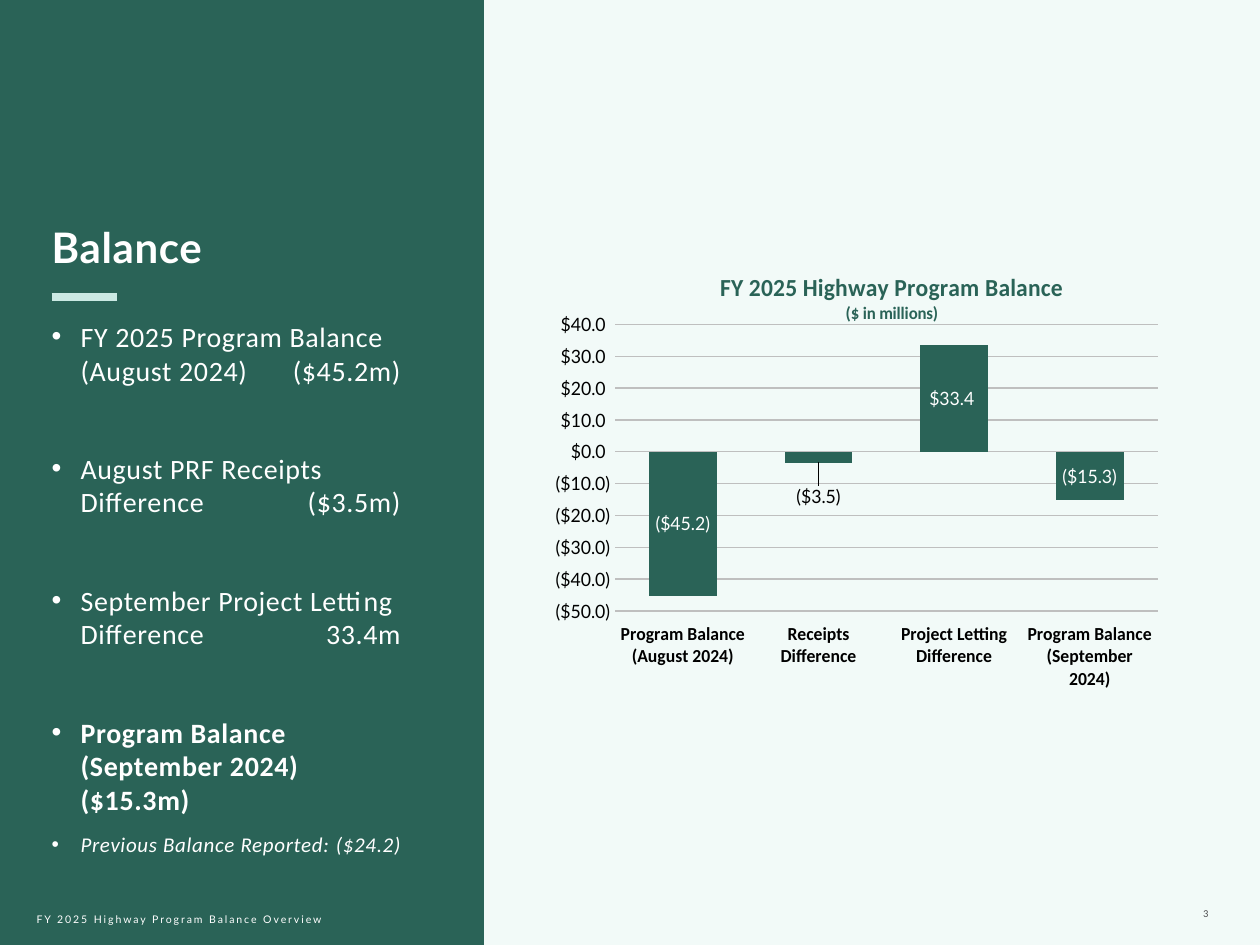
from dataclasses import dataclass

from lxml.etree import SubElement
from pptx import Presentation
from pptx.chart.data import CategoryChartData
from pptx.dml.color import RGBColor
from pptx.enum.chart import XL_CHART_TYPE as ChartType
from pptx.enum.chart import XL_LABEL_POSITION as LabelPosition
from pptx.enum.chart import XL_TICK_LABEL_POSITION as TickPosition
from pptx.enum.chart import XL_TICK_MARK as TickMark
from pptx.enum.shapes import MSO_CONNECTOR as Connector
from pptx.enum.shapes import MSO_SHAPE as Shape
from pptx.enum.text import MSO_ANCHOR as Anchor
from pptx.enum.text import PP_ALIGN as Align
from pptx.oxml import parse_xml
from pptx.oxml.ns import nsdecls, qn
from pptx.util import Inches, Pt

GREEN, MINT, PALE = "2A6357", "CBE9E3", "F2FAF8"
WHITE, BLACK, GREY, RULE = "FFFFFF", "000000", "4D4D4F", "BFBFBF"
MONEY = '"$"#,##0.0_);\\("$"#,##0.0\\)'
INDENT, AMOUNT_TAB = Inches(0.23), Inches(2.77)


@dataclass(frozen=True)
class Area:
    left: float
    top: float
    width: float
    height: float


@dataclass(frozen=True)
class Style:
    size: float
    face: str
    color: str
    bold: bool = False
    italic: bool = False
    spacing: float = 0


@dataclass(frozen=True)
class Item:
    lines: tuple[str, ...]
    style: Style
    before: float


PLAIN = Style(16, "Calibri", WHITE, spacing=0.4)
STRONG = Style(16, "Calibri", WHITE, bold=True, spacing=0.4)
NOTE = Style(12, "Calibri", WHITE, italic=True, spacing=0.4)
ITEMS = (
    Item(("FY 2025 Program Balance", "(August 2024)\t($45.2m)"), PLAIN, 9),
    Item(("August PRF Receipts", "Difference\t($3.5m)"), PLAIN, 37),
    Item(("September Project Letting", "Difference\t33.4m"), PLAIN, 37),
    Item(("Program Balance", "(September 2024)", "($15.3m)"), STRONG, 37),
    Item(("Previous Balance Reported:\t($24.2)",), NOTE, 9),
)
BALANCES = {
    "Program Balance (August 2024)": -45.2,
    "Receipts Difference": -3.5,
    "Project Letting Difference": 33.4,
    "Program Balance (September 2024)": -15.3,
}

deck = Presentation()
deck.slide_width, deck.slide_height = Inches(10), Inches(7.5)
page = deck.slides.add_slide(deck.slide_layouts[6])


def rgb(color: str) -> RGBColor:
    return RGBColor.from_string(color)


def across(percent: float) -> int:
    return round(deck.slide_width * percent / 100)


def down(percent: float) -> int:
    return round(deck.slide_height * percent / 100)


def place(area: Area) -> tuple[int, int, int, int]:
    return across(area.left), down(area.top), across(area.width), down(area.height)


def set_font(font, style: Style) -> None:
    font.size, font.name = Pt(style.size), style.face
    font.bold, font.italic = style.bold, style.italic
    font.color.rgb = rgb(style.color)


def add_span(para, text: str, style: Style) -> None:
    span = para.add_run()
    span.text = text
    set_font(span.font, style)
    if style.spacing:
        span.font._element.set("spc", str(round(style.spacing * 100)))


def add_box(area: Area, anchor: Anchor, padding: float = 0):
    frame = page.shapes.add_textbox(*place(area)).text_frame
    frame.word_wrap = True
    frame.vertical_anchor = anchor
    frame.margin_left = frame.margin_right = 0
    frame.margin_top = frame.margin_bottom = Inches(padding)
    return frame


def add_item(frame, item: Item) -> None:
    para = frame.add_paragraph()
    para.space_before = Pt(item.before)
    properties = para._p.get_or_add_pPr()
    properties.set("marL", str(INDENT))
    properties.set("indent", str(-INDENT))
    SubElement(properties, qn("a:buFont"), typeface="Arial")
    SubElement(properties, qn("a:buChar"), char="•")
    tabs = SubElement(properties, qn("a:tabLst"))
    SubElement(tabs, qn("a:tab"), pos=str(AMOUNT_TAB), algn="r")
    for number, line in enumerate(item.lines):
        if number:
            para.add_line_break()
        add_span(para, line, item.style)


def manual_layout(**values: float):
    modes = "".join(f'<c:{key}Mode val="edge"/>' for key in values if key in "xy")
    sizes = "".join(f'<c:{key} val="{value}"/>' for key, value in values.items())
    target = '<c:layoutTarget val="inner"/>' if "w" in values else ""
    return parse_xml(
        f'<c:layout {nsdecls("c")}><c:manualLayout>{target}{modes}{sizes}'
        "</c:manualLayout></c:layout>"
    )


def replace_layout(parent, layout, index: int) -> None:
    for old in parent.findall(qn("c:layout")):
        parent.remove(old)
    parent.insert(index, layout)


def style_axis(axis, style: Style) -> None:
    axis.major_tick_mark = axis.minor_tick_mark = TickMark.NONE
    set_font(axis.tick_labels.font, style)


def add_balance_chart(area: Area) -> None:
    data = CategoryChartData(number_format=MONEY)
    data.categories = list(BALANCES)
    data.add_series("Series 1", list(BALANCES.values()))
    chart = page.shapes.add_chart(ChartType.COLUMN_CLUSTERED, *place(area), data).chart
    set_font(chart.font, Style(10, "Lato", BLACK))
    chart.has_legend = False

    title = chart.chart_title.text_frame
    add_span(title.paragraphs[0], "FY 2025 Highway Program Balance",
             Style(14, "Calibri", GREEN, bold=True))
    add_span(title.add_paragraph(), "($ in millions)",
             Style(10, "Calibri", GREEN, bold=True))
    chart.chart_title.include_in_layout = False
    replace_layout(chart.chart_title._element, manual_layout(x=0.23, y=0.02), 1)
    replace_layout(chart._chartSpace.chart.plotArea,
                   manual_layout(x=0.06, y=0.15, w=0.91, h=0.65), 0)
    chart._chartSpace.chart.plotArea.find(qn("c:layout"))

    category, value = chart.category_axis, chart.value_axis
    style_axis(category, Style(10.5, "Calibri", BLACK, bold=True))
    category.tick_label_position = TickPosition.LOW
    style_axis(value, Style(10.5, "Lato", BLACK))
    value.minimum_scale, value.maximum_scale, value.major_unit = -50, 40, 10
    value.tick_labels.number_format = MONEY
    value.tick_labels.number_format_is_linked = False
    value.format.line.fill.background()
    for line in (category.format.line, value.major_gridlines.format.line):
        line.color.rgb = rgb(RULE)
        line.width = Pt(0.75)

    plot = chart.plots[0]
    plot.gap_width, plot.overlap, plot.vary_by_categories = 100, -24, False
    series = plot.series[0]
    series.invert_if_negative = False
    series.format.fill.solid()
    series.format.fill.fore_color.rgb = rgb(GREEN)
    labels = series.data_labels
    labels.show_value = True
    labels.position = LabelPosition.CENTER
    labels.number_format, labels.number_format_is_linked = MONEY, False
    set_font(labels.font, Style(10.5, "Lato", WHITE))

    small = series.points[1].data_label
    set_font(small.font, Style(10.5, "Lato", BLACK))
    small.position = LabelPosition.OUTSIDE_END
    index = labels._element.find(qn("c:dLbl")).find(qn("c:idx"))
    number = parse_xml(f'<c:numFmt {nsdecls("c")} sourceLinked="0"/>')
    number.set("formatCode", MONEY)
    index.addnext(number)
    index.addnext(parse_xml(
        f'<c:layout {nsdecls("c")}><c:manualLayout><c:x val="0"/><c:y val="0.04"/>'
        "</c:manualLayout></c:layout>"
    ))


def main() -> None:
    page.background.fill.solid()
    page.background.fill.fore_color.rgb = rgb(PALE)
    panel = page.shapes.add_shape(Shape.RECTANGLE, *place(Area(0, 0, 38.4, 100)))
    panel.shadow.inherit = False
    panel.fill.solid()
    panel.fill.fore_color.rgb = rgb(GREEN)
    panel.line.fill.background()

    number = add_box(Area(86.2, 92.67, 9.7, 5.33), Anchor.BOTTOM, 0.05).paragraphs[0]
    number.alignment = Align.RIGHT
    add_span(number, "3", Style(6, "Calibri", GREY, spacing=1.1))

    add_balance_chart(Area(44.1, 27.33, 49.2, 46.67))

    body = add_box(Area(4.1, 23.47, 30.4, 70.67), Anchor.TOP)
    heading = body.paragraphs[0]
    heading.space_after = Pt(18)
    add_span(heading, "Balance", Style(24, "Lato", WHITE, bold=True, spacing=0.4))
    for item in ITEMS:
        add_item(body, item)

    accent = page.shapes.add_connector(
        Connector.STRAIGHT, across(4.1), down(31.47), across(9.3), down(31.47))
    accent.line.color.rgb = rgb(MINT)
    accent.line.width = Pt(4.5)
    SubElement(accent._element.spPr, qn("a:effectLst"))

    footer = add_box(Area(2.9, 95.33, 26.1, 4), Anchor.MIDDLE, 0.05).paragraphs[0]
    add_span(footer, "FY 2025 Highway Program Balance Overview",
             Style(6, "Lato", WHITE, spacing=1.1))
    deck.save("out.pptx")


if __name__ == "__main__":
    main()
